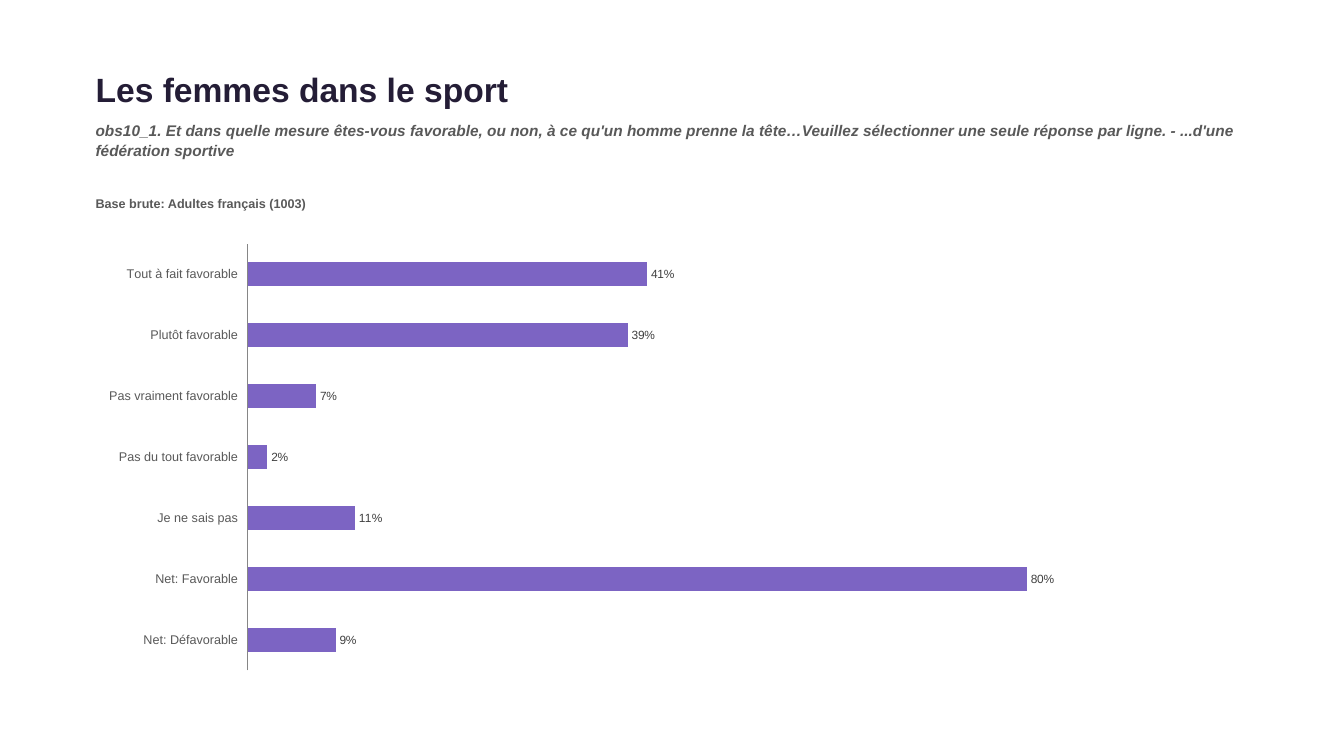
from dataclasses import dataclass

from lxml.etree import SubElement
from pptx import Presentation
from pptx.chart.data import CategoryChartData
from pptx.dml.color import RGBColor
from pptx.enum.chart import XL_CHART_TYPE as ChartType
from pptx.enum.chart import XL_LABEL_POSITION as LabelPosition
from pptx.enum.chart import XL_TICK_LABEL_POSITION as TickLabelPosition
from pptx.enum.chart import XL_TICK_MARK as TickMark
from pptx.enum.text import MSO_ANCHOR as Anchor
from pptx.oxml.ns import qn
from pptx.slide import Slide
from pptx.text.text import Font
from pptx.util import Pt


@dataclass(frozen=True)
class Theme:
    font: str = "Arial"
    heading: str = "241D36"
    muted: str = "595959"
    value: str = "404040"
    bar: str = "7C64C3"
    axis: str = "868686"
    title_size: float = 24
    question_size: float = 11
    small_size: float = 9
    value_size: float = 8.5


@dataclass(frozen=True)
class TextBlock:
    text: str
    top: float
    height: float
    size: float
    color: str
    italic: bool = False
    anchor: Anchor = Anchor.TOP
    line_spacing: float = 1.0


@dataclass(frozen=True)
class Answer:
    label: str
    share: float


THEME = Theme()
LEFT = 61.2
TEXT_WIDTH = 837.4

TEXT_BLOCKS = [
    TextBlock("Les femmes dans le sport", 45.4, 36, THEME.title_size,
              THEME.heading, anchor=Anchor.MIDDLE),
    TextBlock("obs10_1. Et dans quelle mesure êtes-vous favorable, ou non, à ce qu'un homme "
              "prenne la tête…Veuillez sélectionner une seule réponse par ligne. - ...d'une "
              "fédération sportive", 82.1, 54, THEME.question_size, THEME.muted,
              italic=True, line_spacing=1.07),
    TextBlock("Base brute: Adultes français (1003)", 136.1, 31.7, THEME.small_size, THEME.muted),
]

ANSWERS = [
    Answer("Tout à fait favorable", 0.41),
    Answer("Plutôt favorable", 0.39),
    Answer("Pas vraiment favorable", 0.07),
    Answer("Pas du tout favorable", 0.02),
    Answer("Je ne sais pas", 0.11),
    Answer("Net: Favorable", 0.8),
    Answer("Net: Défavorable", 0.09),
]


def style_font(font: Font, size: float, color: str, bold: bool = False,
               italic: bool = False) -> None:
    font.name = THEME.font
    font.size = Pt(size)
    font.bold = bold
    font.italic = italic
    font.color.rgb = RGBColor.from_string(color)


def draw_text(slide: Slide, block: TextBlock) -> None:
    frame = slide.shapes.add_textbox(
        Pt(LEFT), Pt(block.top), Pt(TEXT_WIDTH), Pt(block.height)).text_frame
    frame.word_wrap = True
    frame.vertical_anchor = block.anchor
    frame.text = block.text
    paragraph = frame.paragraphs[0]
    paragraph.line_spacing = block.line_spacing
    style_font(paragraph.runs[0].font, block.size, block.color, True, block.italic)


def draw_chart(slide: Slide, answers: list[Answer]) -> None:
    bottom_up = answers[::-1]
    data = CategoryChartData(number_format="0%")
    data.categories = [answer.label for answer in bottom_up]
    data.add_series("Series 1", [answer.share for answer in bottom_up])
    chart = slide.shapes.add_chart(
        ChartType.BAR_CLUSTERED, Pt(LEFT), Pt(167.8), Pt(828), Pt(317.5), data).chart
    chart.has_title = False
    chart.has_legend = False
    style_font(chart.font, THEME.small_size, THEME.muted)

    share_axis = chart.value_axis
    share_axis.minimum_scale = 0
    share_axis.maximum_scale = 1
    share_axis.major_unit = 0.1
    share_axis.has_major_gridlines = False
    share_axis.visible = False

    answer_axis = chart.category_axis
    answer_axis.major_tick_mark = TickMark.NONE
    answer_axis.minor_tick_mark = TickMark.NONE
    answer_axis.tick_label_position = TickLabelPosition.LOW
    answer_axis.format.line.color.rgb = RGBColor.from_string(THEME.axis)
    answer_axis.format.line.width = Pt(0.75)
    style_font(answer_axis.tick_labels.font, THEME.small_size, THEME.muted)

    plot = chart.plots[0]
    plot.gap_width = 150
    plot.overlap = -10
    plot.vary_by_categories = False
    bars = plot.series[0]
    bars.invert_if_negative = False
    bars.format.fill.solid()
    bars.format.fill.fore_color.rgb = RGBColor.from_string(THEME.bar)

    labels = bars.data_labels
    labels.show_value = True
    labels.position = LabelPosition.OUTSIDE_END
    labels.number_format = "0%"
    labels.number_format_is_linked = False
    style_font(labels.font, THEME.value_size, THEME.value)

    plot_area = chart.element.find(".//" + qn("c:plotArea"))
    layout = plot_area.find(qn("c:layout"))
    if layout is None:
        layout = SubElement(plot_area, qn("c:layout"))
        plot_area.insert(0, layout)
    manual = SubElement(layout, qn("c:manualLayout"))
    settings = {"layoutTarget": "inner", "xMode": "edge", "yMode": "edge",
                "x": "0.14", "y": "0.02", "w": "0.84", "h": "0.96"}
    for tag, setting in settings.items():
        SubElement(manual, qn(f"c:{tag}")).set("val", setting)


def main() -> None:
    deck = Presentation()
    deck.slide_width = Pt(960)
    deck.slide_height = Pt(540)
    slide = deck.slides.add_slide(deck.slide_layouts[6])
    for block in TEXT_BLOCKS:
        draw_text(slide, block)
    draw_chart(slide, ANSWERS)
    deck.save("out.pptx")


if __name__ == "__main__":
    main()
